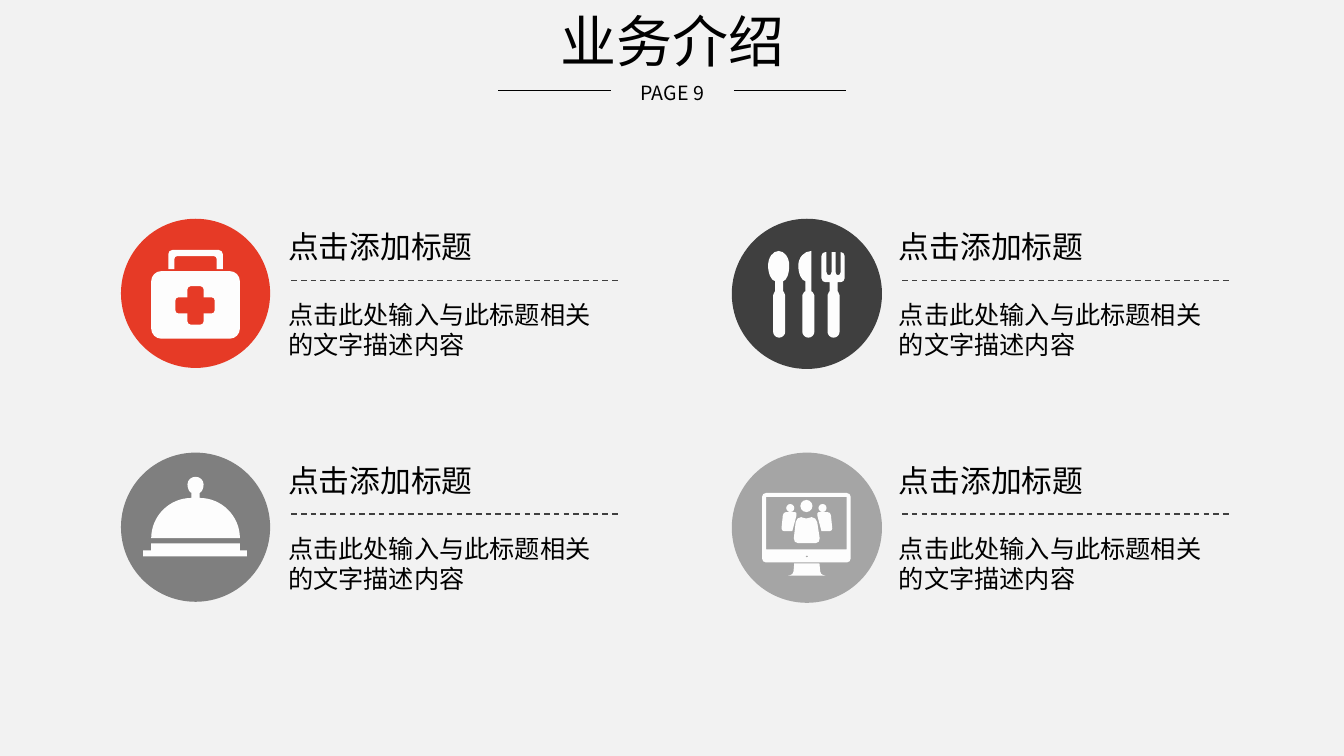
from lxml.etree import SubElement
from math import hypot
from pptx import Presentation
from pptx.dml.color import RGBColor
from pptx.enum.dml import MSO_LINE
from pptx.enum.shapes import MSO_CONNECTOR, MSO_SHAPE
from pptx.enum.text import MSO_ANCHOR, MSO_AUTO_SIZE, PP_ALIGN
from pptx.oxml.ns import qn
from pptx.util import Inches, Pt

BACKGROUND = RGBColor(0xF2, 0xF2, 0xF2)
BLACK = RGBColor(0, 0, 0)
WHITE = RGBColor(0xFD, 0xFD, 0xFD)
RED = RGBColor(0xE6, 0x3A, 0x26)
CHARCOAL = RGBColor(0x3F, 0x3F, 0x3F)
DASH_GRAY = RGBColor(0x40, 0x40, 0x40)
MID_GRAY = RGBColor(0x7F, 0x7F, 0x7F)
LIGHT_GRAY = RGBColor(0xA5, 0xA5, 0xA5)
SANS, TITLE_FONT = "Noto Sans CJK SC", "Noto Sans CJK JP"


def add_run(tf, text, size, font=SANS, align=PP_ALIGN.LEFT):
    p = tf.paragraphs[0]
    p.alignment = align
    r = p.add_run()
    r.text = text
    r.font.size = Pt(size)
    r.font.name = font
    r.font.color.rgb = BLACK
    SubElement(r.font._element, qn("a:ea")).set("typeface", font)
    return p


def draw_icon(shapes, *outlines):
    """Fill outlines of (x, y, corner radius); inner outlines become holes."""
    fb, controls = None, []
    for corners in outlines:
        points = []
        for i, (x, y, radius) in enumerate(corners):
            if not radius:
                points.append((Inches(x), Inches(y)))
                controls.append(())
                continue
            handles = []
            for nx, ny, other in (corners[i - 1], corners[(i + 1) % len(corners)]):
                length = hypot(nx - x, ny - y)
                cut = min(radius, length / 2 if other else length) / length
                dx, dy = (nx - x) * cut, (ny - y) * cut
                points.append((Inches(x + dx), Inches(y + dy)))
                handles.append((Inches(x + 0.45 * dx), Inches(y + 0.45 * dy)))
            controls += [(), handles]
        if fb is None:
            fb = shapes.build_freeform(*points[0], scale=1.0)
        else:
            fb.move_to(*points[0])
        fb.add_line_segments(points[1:], close=True)
    sp = fb.convert_to_shape()
    sp.shadow.inherit = False
    sp.fill.solid()
    sp.fill.fore_color.rgb = WHITE
    sp.line.fill.background()
    # Turn the segment across each rounded corner into a Bezier curve
    steps = list(sp._element.iter(qn("a:moveTo"), qn("a:lnTo")))
    for step, handles in zip(steps, controls):
        if handles:
            step.tag = qn("a:cubicBezTo")
            end = step[0]
            for x, y in handles:
                pt = SubElement(step, qn("a:pt"))
                pt.set("x", str(x - sp.left))
                pt.set("y", str(y - sp.top))
            step.append(end)


prs = Presentation()
prs.slide_width, prs.slide_height = Inches(40 / 3), Inches(7.5)
slide = prs.slides.add_slide(prs.slide_layouts[5])
slide.background.fill.solid()
slide.background.fill.fore_color.rgb = BACKGROUND

# Title and page label
title = slide.shapes.title
title.left, title.top, title.width, title.height = map(Inches, (4.54, -0.04, 4.26, 0.96))
title.text_frame.word_wrap = False
title.text_frame.auto_size = MSO_AUTO_SIZE.NONE
title.text_frame.vertical_anchor = MSO_ANCHOR.MIDDLE
add_run(title.text_frame, "业务介绍", 40, TITLE_FONT, PP_ALIGN.CENTER).line_spacing = 0.9
page = slide.shapes.add_textbox(Inches(5.72), Inches(0.75), Inches(1.9), Inches(0.34))
page.text_frame.word_wrap = True
add_run(page.text_frame, "PAGE 9", 14, align=PP_ALIGN.CENTER)

# Four services: heading and description
LEFTS, TOPS = (1.2, 7.26), (2.17, 4.49)
rules = [(slide.shapes, 6.06, 4.94, 0.9, BLACK, 0.5, None),
         (slide.shapes, 7.28, 8.39, 0.9, BLACK, 0.5, None)]
for top in TOPS:
    for left in LEFTS:
        group = slide.shapes.add_group_shape().shapes
        for dy, width, height, text, size, wrap in (
                (0.04, 2.05, 0.47, "点击添加标题", 22, False),
                (0.75, 3.37, 0.71, "点击此处输入与此标题相关的文字描述内容", 18, True)):
            box = group.add_textbox(Inches(left + 1.56), Inches(top + dy),
                                    Inches(width), Inches(height))
            box.text_frame.word_wrap = wrap
            add_run(box.text_frame, text, size)
        rules.append((group, left + 1.69, left + 4.93, top + 0.61, DASH_GRAY, 1,
                      MSO_LINE.DASH))

# Lines beside the page label and under the headings
for shapes, x1, x2, y, color, width, dash in rules:
    line = shapes.add_connector(MSO_CONNECTOR.STRAIGHT, Inches(x1), Inches(y),
                                Inches(x2), Inches(y))
    line.line.color.rgb = color
    line.line.width = Pt(width)
    line.line.dash_style = dash
    SubElement(line._element.spPr, qn("a:effectLst"))

# Icon circles, and the heads of the people on the monitor
kit, cutlery, cloche, monitor = (slide.shapes.add_group_shape().shapes for _ in range(4))
for group, x, y, d, color in ((kit, LEFTS[0], TOPS[0], 1.48, RED),
                              (cutlery, LEFTS[1], TOPS[0], 1.49, CHARCOAL),
                              (cloche, LEFTS[0], TOPS[1], 1.48, MID_GRAY),
                              (monitor, LEFTS[1], TOPS[1], 1.49, LIGHT_GRAY),
                              (monitor, 8.12, 5, 0.08, WHITE),
                              (monitor, 7.8, 5, 0.08, WHITE),
                              (monitor, 7.94, 4.96, 0.12, WHITE)):
    sp = group.add_shape(MSO_SHAPE.OVAL, Inches(x), Inches(y), Inches(d), Inches(d))
    sp.shadow.inherit = False
    sp.fill.solid()
    sp.fill.fore_color.rgb = color
    sp.line.fill.background()

# Monitor: stand, then frame with screen and button cut out
draw_icon(monitor, [(7.82, 5.71, 0), (7.87, 5.7, 0.03), (7.88, 5.59, 0),
                    (8.13, 5.59, 0), (8.14, 5.7, 0.03), (8.19, 5.71, 0)])
draw_icon(monitor, *[
    [(x1, y1, rad), (x2, y1, rad), (x2, y2, rad), (x1, y2, rad)]
    for x1, y1, x2, y2, rad in ((7.56, 4.89, 8.44, 5.58, 0.04),
                                (7.6, 4.93, 8.4, 5.45, 0),
                                (7.99, 5.51, 8.02, 5.53, 0.02))])

# People on the monitor: two mirrored side figures, one in the middle
side = [(7.77, 5.08, 0.03), (7.9, 5.08, 0.01), (7.9, 5.12, 0),
        (7.86, 5.27, 0), (7.75, 5.27, 0.03)]
draw_icon(monitor, [(16.01 - x, y, rad) for x, y, rad in side])
draw_icon(monitor, side)
draw_icon(monitor, [(7.9, 5.13, 0.05), (7.95, 5.13, 0), (8, 5.16, 0.05), (8.05, 5.13, 0),
                    (8.1, 5.13, 0.05), (8.14, 5.39, 0.05), (7.87, 5.39, 0.05)])

# First-aid kit: body with a cross cut out, and handle
draw_icon(kit,
          [(1.5, 2.69, 0.1), (2.38, 2.69, 0.1), (2.38, 3.36, 0.1), (1.5, 3.36, 0.1)],
          [(1.86, 2.84, 0.03), (2.02, 2.84, 0.03), (2.02, 2.95, 0), (2.13, 2.95, 0.03),
           (2.13, 3.11, 0.03), (2.02, 3.11, 0), (2.02, 3.22, 0.03), (1.86, 3.22, 0.03),
           (1.86, 3.11, 0), (1.74, 3.11, 0.03), (1.74, 2.95, 0.03), (1.86, 2.95, 0)])
draw_icon(kit, [(1.67, 2.67, 0), (1.67, 2.48, 0.04), (2.21, 2.48, 0.04), (2.21, 2.67, 0),
                (2.15, 2.67, 0), (2.15, 2.54, 0.03), (1.73, 2.54, 0.03), (1.73, 2.67, 0)])

# Fork, spoon and knife share one handle
fork = [(8.15, 2.8, 0.04), (8.15, 2.5, 0.04), (8.2, 2.5, 0), (8.2, 2.73, 0.03),
        (8.25, 2.73, 0.03), (8.25, 2.5, 0), (8.29, 2.5, 0), (8.29, 2.73, 0.03),
        (8.34, 2.73, 0.03), (8.34, 2.5, 0), (8.38, 2.5, 0.04), (8.38, 2.8, 0.04)]
spoon = [(7.62, 2.78, 0.2), (7.62, 2.49, 0.2), (7.83, 2.49, 0.2), (7.83, 2.78, 0.2)]
knife = [(7.92, 2.78, 0.2), (7.92, 2.49, 0.2), (8.05, 2.49, 0)]
for x, half_neck, neck, head in ((8.27, 0.04, 2.8, fork), (7.73, 0.04, 2.79, spoon),
                                 (8.02, 0.03, 2.79, knife)):
    draw_icon(cutlery, head + [
        (x + half_neck, neck, 0), (x + half_neck, 2.89, 0), (x + 0.06, 2.91, 0.02),
        (x + 0.06, 3.35, 0.06), (x - 0.06, 3.35, 0.06), (x - 0.06, 2.91, 0.02),
        (x - half_neck, 2.89, 0), (x - half_neck, neck, 0)])

# Cloche: dome with knob, and tray
draw_icon(cloche, [(1.5, 5.34, 0), (1.5, 4.94, 0.5), (1.9, 4.94, 0), (1.9, 4.89, 0),
                   (1.86, 4.88, 0.1), (1.86, 4.73, 0.1), (2.02, 4.73, 0.1),
                   (2.02, 4.88, 0.1), (1.98, 4.89, 0), (1.98, 4.94, 0),
                   (2.38, 4.94, 0.5), (2.38, 5.34, 0)])
draw_icon(cloche, [(1.5, 5.39, 0), (2.38, 5.39, 0), (2.38, 5.46, 0), (2.45, 5.46, 0),
                   (2.45, 5.52, 0), (1.42, 5.52, 0), (1.42, 5.46, 0), (1.5, 5.46, 0)])

prs.save("out.pptx")
